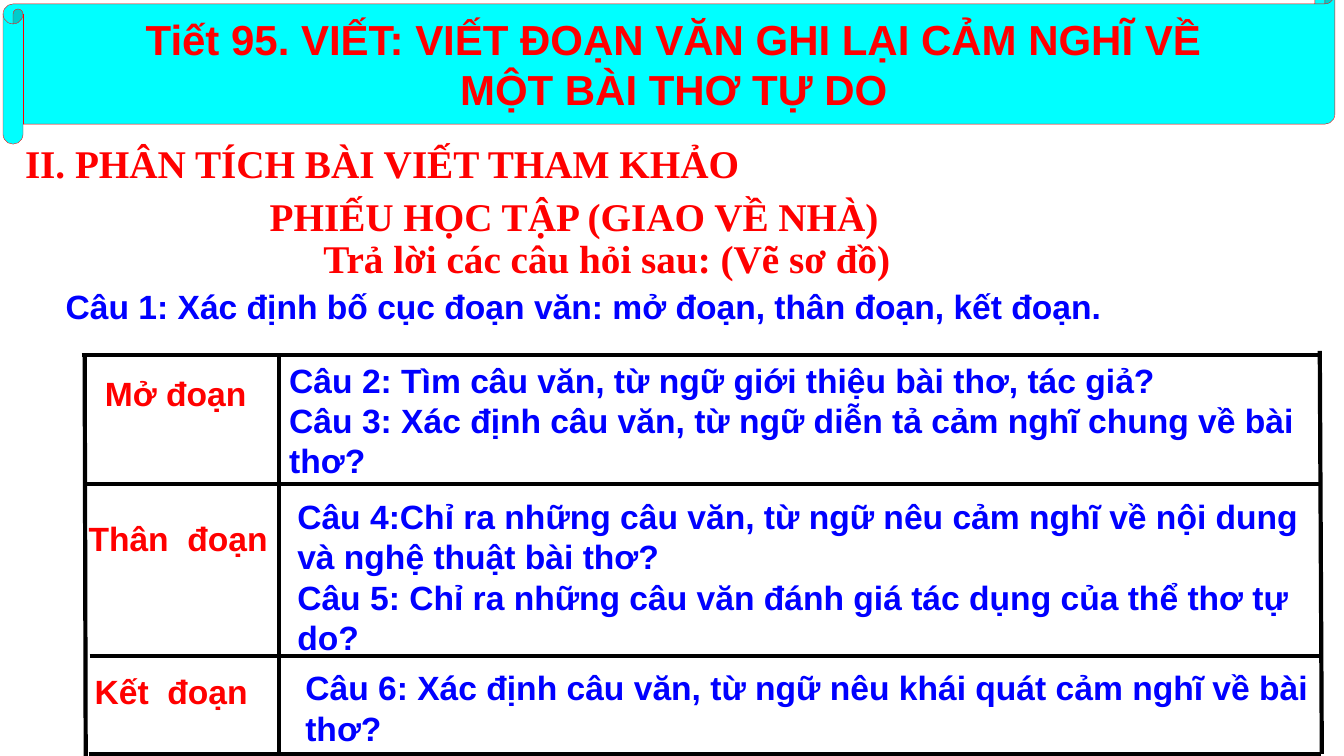
from dataclasses import dataclass

from lxml import etree
from pptx import Presentation
from pptx.dml.color import RGBColor
from pptx.enum import shapes, text
from pptx.oxml import ns
from pptx.util import Inches, Pt


@dataclass(frozen=True)
class Theme:
    """Colours, fonts and sizes of the lesson."""
    red: RGBColor = RGBColor(0xFF, 0, 0)
    blue: RGBColor = RGBColor(0, 0, 0xFF)
    cyan: RGBColor = RGBColor(0, 0xFF, 0xFF)
    black: RGBColor = RGBColor(0, 0, 0)
    sans: str = "Arial"
    serif: str = "Times New Roman"
    title: int = 30
    heading: int = 28
    body: int = 24
    rule: float = 3
    outline: float = 0.25


THEME = Theme()


def write(frame, lines, size, color, face, align=None):
    """Fill a text frame with one bold paragraph per line."""
    for index, line in enumerate(lines):
        paragraph = frame.paragraphs[0] if index == 0 else frame.add_paragraph()
        paragraph.text = line
        paragraph.alignment = align
        font = paragraph.font
        font.size, font.bold, font.name = Pt(size), True, face
        font.color.rgb = color


def add_text(slide, box, lines, size, color, face):
    """Add a wrapped text box at box (left, top, width, height)."""
    frame = slide.shapes.add_textbox(*map(Inches, box)).text_frame
    frame.word_wrap = True
    write(frame, lines, size, color, face)


def add_rule(slide, start, end):
    """Draw one black rule of the outline grid."""
    rule = slide.shapes.add_connector(
        shapes.MSO_CONNECTOR.STRAIGHT, *map(Inches, (*start, *end)))
    rule.line.color.rgb = THEME.black
    rule.line.width = Pt(THEME.rule)
    etree.SubElement(rule.element.spPr, ns.qn("a:effectLst"))


def add_banner(slide, box, lines):
    """Draw the scroll that carries the lesson title."""
    scroll = slide.shapes.add_shape(
        shapes.MSO_SHAPE.HORIZONTAL_SCROLL, *map(Inches, box))
    scroll.shadow.inherit = False
    scroll.fill.solid()
    scroll.fill.fore_color.rgb = THEME.cyan
    scroll.line.color.rgb = THEME.red
    scroll.line.width = Pt(THEME.outline)
    frame = scroll.text_frame
    frame.word_wrap = False
    frame.vertical_anchor = text.MSO_ANCHOR.MIDDLE
    write(frame, lines, THEME.title, THEME.red, THEME.sans,
          text.PP_ALIGN.CENTER)


def add_intro(slide, box):
    """Place the section heading, worksheet title and first question."""
    left, top, width, _ = box
    headings = [
        (0, 0, "II. PHÂN TÍCH BÀI VIẾT THAM KHẢO"),
        (2.33, 0.53, " PHIẾU HỌC TẬP (GIAO VỀ NHÀ)"),
        (2.96, 0.95, "Trả lời các câu hỏi sau: (Vẽ sơ đồ)"),
    ]
    for dx, dy, heading in headings:
        add_text(slide, (left + dx, top + dy, 9.06, 0.57), [heading],
                 THEME.heading, THEME.red, THEME.serif)
    question = " Câu 1: Xác định bố cục đoạn văn: mở đoạn, thân đoạn, kết đoạn."
    add_text(slide, (left + 0.31, top + 1.46, width, 0.5), [question],
             THEME.body, THEME.blue, THEME.sans)


def add_outline(slide, box):
    """Draw the ruled grid of paragraph parts and their questions."""
    left, top, width, height = box
    right, bottom, divider = left + width, top + height, left + 1.93
    add_rule(slide, (left, top), (left + 0.01, bottom))
    add_rule(slide, (right - 0.01, top - 0.04), (right + 0.01, bottom - 0.02))
    add_rule(slide, (divider, top), (divider, bottom))
    for inset, dy in [(-0.03, 0), (0.02, 1.28), (0.05, 2.99), (0.04, 3.96)]:
        add_rule(slide, (left + inset, top + dy), (right, top + dy))

    parts = [
        (" Mở đoạn", 0.01, 0.13, 0, 1.33, [
            "Câu 2: Tìm câu văn, từ ngữ giới thiệu bài thơ, tác giả?",
            "Câu 3: Xác định câu văn, từ ngữ diễn tả cảm nghĩ chung về bài thơ?",
        ]),
        ("Thân  đoạn", -0.06, 1.57, 1.35, 1.72, [
            "Câu 4:Chỉ ra những câu văn, từ ngữ nêu cảm nghĩ về nội dung và nghệ thuật bài thơ?",
            "Câu 5: Chỉ ra những câu văn đánh giá tác dụng của thể thơ tự do?",
        ]),
        ("Kết  đoạn", 0, 3.09, 3.05, 0.91, [
            "Câu 6: Xác định câu văn, từ ngữ nêu khái quát cảm nghĩ về bài thơ?",
        ]),
    ]
    for row, (part, dx, part_dy, dy, tall, questions) in enumerate(parts):
        add_text(slide, (left + dx, top + part_dy, 2, 0.5), [part],
                 THEME.body, THEME.red, THEME.sans)
        add_text(slide, (divider + 0.08 * row, top + dy, 10.31, tall),
                 questions, THEME.body, THEME.blue, THEME.sans)


def main():
    """Build the lesson slide and save it."""
    lesson = Presentation()
    lesson.slide_width, lesson.slide_height = Inches(13.33), Inches(7.5)
    slide = lesson.slides.add_slide(lesson.slide_layouts[6])
    add_banner(slide, (0.03, -0.16, 13.21, 1.59), [
        "Tiết 95. VIẾT: VIẾT ĐOẠN VĂN GHI LẠI CẢM NGHĨ VỀ",
        "MỘT BÀI THƠ TỰ DO",
    ])
    add_intro(slide, (0.15, 1.33, 11.45, 1.96))
    add_outline(slide, (0.84, 3.52, 12.26, 3.98))
    lesson.save("out.pptx")


if __name__ == "__main__":
    main()
